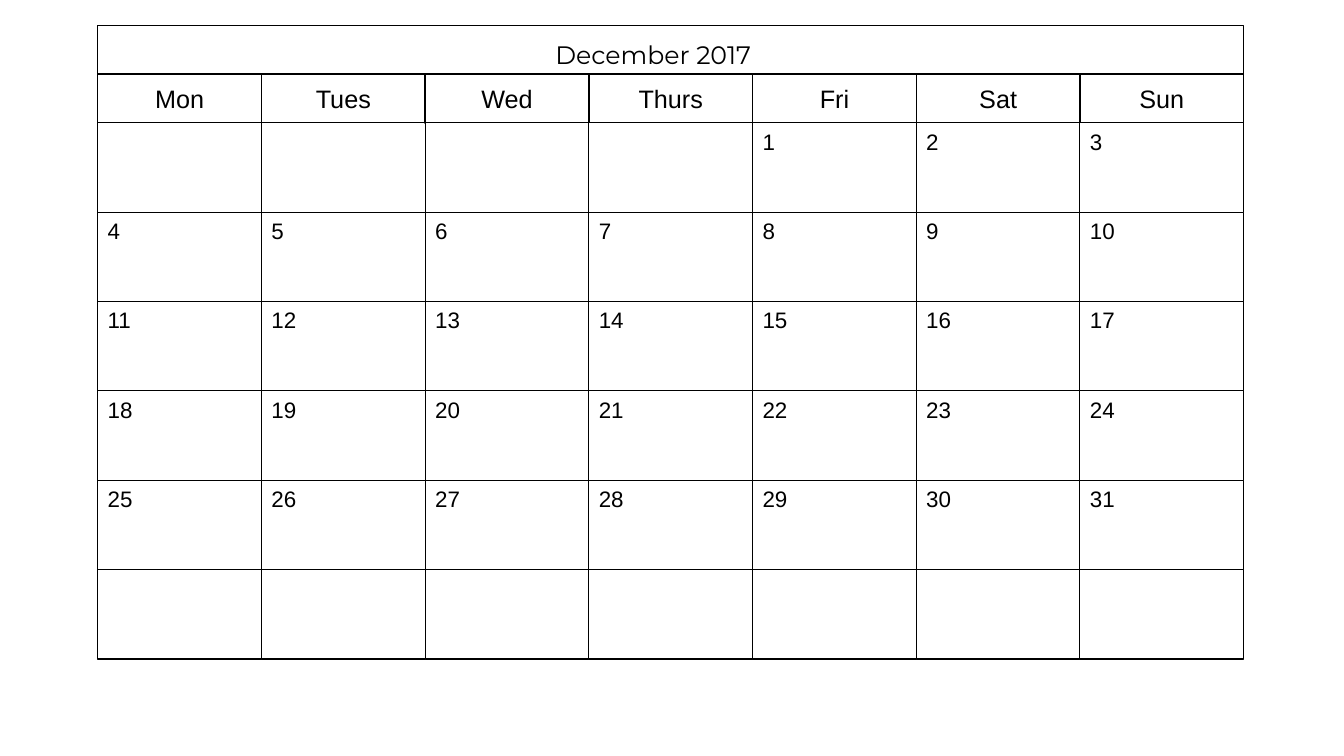
"""Build a one-page calendar slide for December 2017."""
from pptx import Presentation
from pptx.dml.color import RGBColor
from pptx.enum.shapes import MSO_SHAPE
from pptx.enum.text import MSO_ANCHOR, MSO_AUTO_SIZE, PP_ALIGN
from pptx.util import Pt

RECTANGLE = MSO_SHAPE.RECTANGLE
TOP, MIDDLE = MSO_ANCHOR.TOP, MSO_ANCHOR.MIDDLE
LEFT, CENTER = PP_ALIGN.LEFT, PP_ALIGN.CENTER
GROW = MSO_AUTO_SIZE.SHAPE_TO_FIT_TEXT

MONTH = "December 2017"
WEEKDAYS = ["Mon", "Tues", "Wed", "Thurs", "Fri", "Sat", "Sun"]
FIRST_COLUMN = 4
DAY_COUNT = 31
WEEK_COUNT = 6

BLACK, WHITE = "000000", "FFFFFF"
GRID_LEFT = 69.84
COLUMN_WIDTH = 116.93
HEADER_TOP, HEADER_HEIGHT = 18, 34.9
WEEKDAY_TOP = HEADER_TOP + HEADER_HEIGHT
WEEKS_TOP = WEEKDAY_TOP + HEADER_HEIGHT
WEEK_HEIGHT = 63.83


def color(value):
    return RGBColor.from_string(value)


def write(box, text, size, font, align, anchor, inset):
    frame = box.text_frame
    frame.vertical_anchor = anchor
    frame.margin_left = frame.margin_right = Pt(7.2)
    frame.margin_top = frame.margin_bottom = Pt(inset)
    para = frame.paragraphs[0]
    para.alignment = align
    span = para.add_run()
    span.text = text
    span.font.size = Pt(size)
    span.font.name = font
    span.font.color.rgb = color(BLACK)


def add_cell(page, left, top, width, height, line_width):
    cell = page.shapes.add_shape(RECTANGLE, Pt(left), Pt(top), Pt(width), Pt(height))
    cell.shadow.inherit = False
    cell.fill.solid()
    cell.fill.fore_color.rgb = color(WHITE)
    cell.line.color.rgb = color(BLACK)
    cell.line.width = Pt(line_width)
    return cell


def add_header(page):
    banner = add_cell(page, GRID_LEFT, HEADER_TOP, COLUMN_WIDTH * len(WEEKDAYS), HEADER_HEIGHT, 1)
    title = page.shapes.title
    title.element.addprevious(banner.element)
    title.left, title.top, title.width, title.height = Pt(389.5), Pt(24.5), Pt(170), Pt(28.8)
    title.fill.solid()
    title.fill.fore_color.rgb = color(WHITE)
    write(title, MONTH, 18, "Montserrat", LEFT, TOP, 3.6)
    title.text_frame.word_wrap = False
    title.text_frame.auto_size = GROW


def add_grid(page):
    for column, weekday in enumerate(WEEKDAYS):
        left = GRID_LEFT + column * COLUMN_WIDTH
        heading = add_cell(page, left, WEEKDAY_TOP, COLUMN_WIDTH, HEADER_HEIGHT, 1)
        write(heading, weekday, 18, "Arial", CENTER, MIDDLE, 1.44)
        for week in range(WEEK_COUNT):
            top = WEEKS_TOP + week * WEEK_HEIGHT
            cell = add_cell(page, left, top, COLUMN_WIDTH, WEEK_HEIGHT, 0.75)
            day = week * len(WEEKDAYS) + column - FIRST_COLUMN + 1
            if 1 <= day <= DAY_COUNT:
                write(cell, str(day), 16, "Arial", LEFT, TOP, 3.6)


def main():
    deck = Presentation()
    deck.slide_width, deck.slide_height = Pt(960), Pt(540)
    page = deck.slides.add_slide(deck.slide_layouts[5])
    page.background.fill.solid()
    page.background.fill.fore_color.rgb = color(WHITE)
    add_header(page)
    add_grid(page)
    deck.save("out.pptx")


if __name__ == "__main__":
    main()
